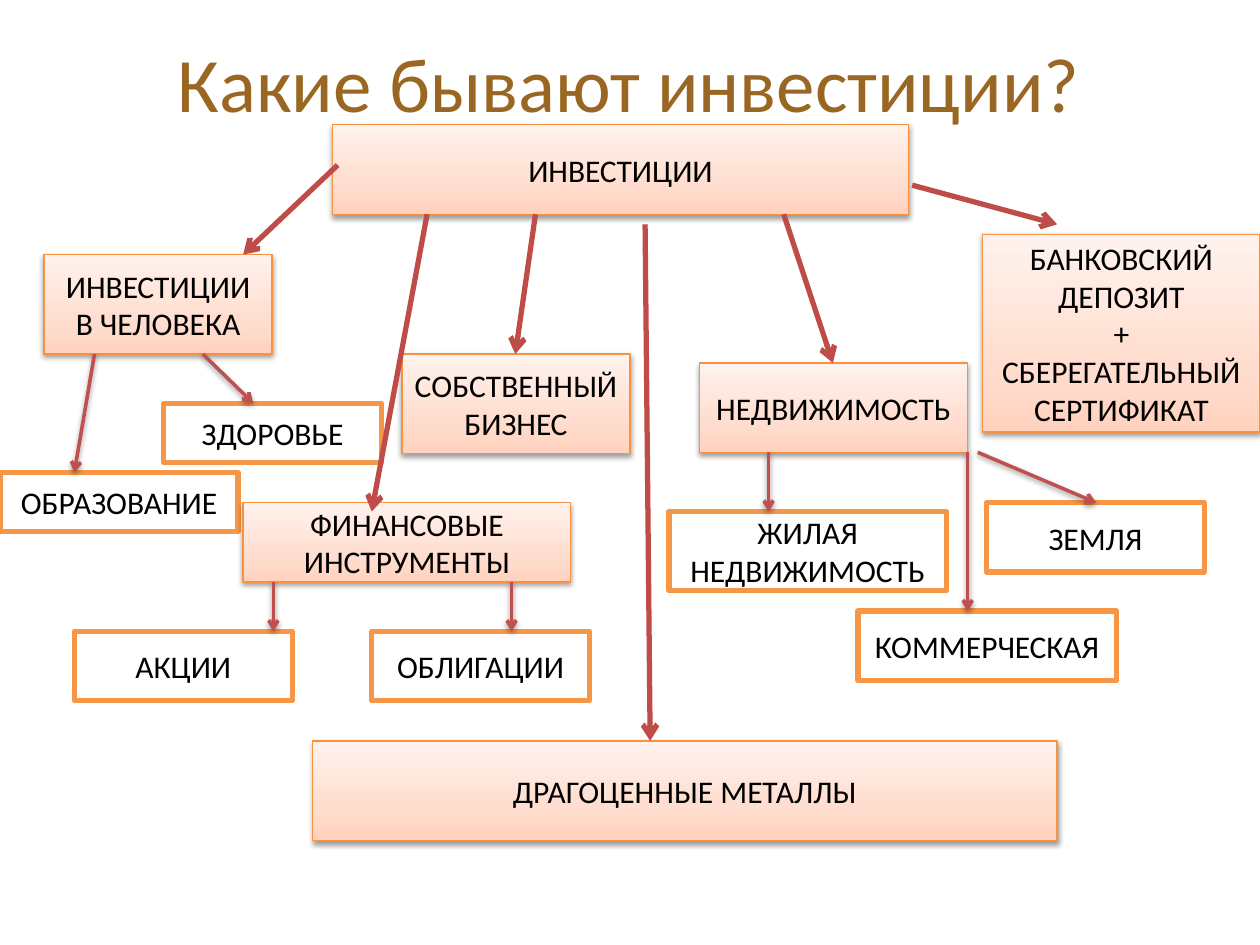
from copy import deepcopy

from lxml.etree import SubElement
from pptx import Presentation
from pptx.dml.color import RGBColor
from pptx.enum.shapes import MSO_CONNECTOR as CONN, MSO_SHAPE as SHAPE
from pptx.enum.text import MSO_ANCHOR as ANCHOR, PP_ALIGN as ALIGN
from pptx.oxml.ns import qn
from pptx.util import Inches, Pt

FONT = "Calibri"
GRADIENT = [(0, "FFD2BD"), (0.35, "FFDED0"), (1, "FFF2ED")]

BRANCHES = [
    ((0.35, 2.02, 1.81, 0.79), ["ИНВЕСТИЦИИ В ЧЕЛОВЕКА"], [
        ("ЗДОРОВЬЕ", (0.95, 1.18, 1.73, 0.47), 1.26, 1.66),
        ("ОБРАЗОВАНИЕ", (-0.35, 1.73, 1.89, 0.47), 0.4, 0.24),
    ]),
    ((1.93, 3.99, 2.6, 0.63), ["ФИНАНСОВЫЕ ИНСТРУМЕНТЫ"], [
        ("АКЦИИ", (-1.34, 1.02, 1.73, 0.55), 0.24, 0.24),
        ("ОБЛИГАЦИИ", (1.02, 1.02, 1.73, 0.55), 2.13, 2.13),
    ]),
    ((3.19, 2.81, 1.81, 0.79), ["СОБСТВЕННЫЙ БИЗНЕС"], []),
    ((5.55, 2.88, 2.13, 0.71), ["НЕДВИЖИМОСТЬ"], [
        ("ЖИЛАЯ НЕДВИЖИМОСТЬ", (-0.24, 1.18, 2.2, 0.63), 0.55, 0.55),
        ("КОММЕРЧЕСКАЯ", (1.26, 1.97, 2.05, 0.55), 2.13, 2.13),
        ("ЗЕМЛЯ", (2.28, 1.11, 1.73, 0.55), 2.21, 3.15),
    ]),
    ((7.8, 1.86, 2.2, 1.57),
     ["БАНКОВСКИЙ ДЕПОЗИТ", "+", "СБЕРЕГАТЕЛЬНЫЙ СЕРТИФИКАТ"], []),
    ((2.48, 5.88, 5.91, 0.79), ["ДРАГОЦЕННЫЕ МЕТАЛЛЫ"], []),
]

ROOT_ARROWS = [
    (0.04, 0.32, -0.71, 1.03),
    (1.61, 0.71, 1.45, 1.82),
    (0.75, 0.71, 0.31, 3.07),
    (3.58, 0.71, 3.97, 1.89),
    (4.6, 0.48, 5.75, 0.79),
    (2.48, 0.79, 2.52, 4.89),
]


def rgb(value):
    """Turn a hex string into a colour."""
    return RGBColor.from_string(value)


def write(tf, lines, size, color):
    """Fill a text frame with centred paragraphs."""
    tf.word_wrap = True
    tf.vertical_anchor = ANCHOR.MIDDLE
    for i, line in enumerate(lines):
        p = tf.add_paragraph() if i else tf.paragraphs[0]
        p.text = line
        p.alignment = ALIGN.CENTER
        p.font.size = Pt(size)
        p.font.name = FONT
        p.font.color.rgb = rgb(color)


def set_effects(sp, shadow):
    """Give a shape a soft shadow below it, or no effect at all."""
    effects = SubElement(sp._element.spPr, qn("a:effectLst"))
    if shadow:
        outer = SubElement(effects, qn("a:outerShdw"), blurRad="40000",
                           dist="20000", dir="5400000", rotWithShape="0")
        color = SubElement(outer, qn("a:srgbClr"), val="000000")
        SubElement(color, qn("a:alpha"), val="38000")


def draw_box(s, box, lines, line_color, line_width, shadow):
    """Add a captioned rectangle and return it."""
    sp = s.shapes.add_shape(SHAPE.RECTANGLE, *map(Inches, box))
    sp.line.color.rgb = rgb(line_color)
    sp.line.width = Pt(line_width)
    set_effects(sp, shadow)
    write(sp.text_frame, lines, 18, "000000")
    return sp


def draw_node(s, box, lines):
    """Add a gradient box for a main category."""
    sp = draw_box(s, box, lines, "F69240", 0.75, True)
    sp.fill.gradient()
    first = sp._element.spPr.find(".//" + qn("a:gs"))
    first.addnext(deepcopy(first))
    for stop, (position, color) in zip(sp.fill.gradient_stops, GRADIENT):
        stop.position = position
        stop.color.rgb = rgb(color)
    sp.fill.gradient_angle = 90


def draw_leaf(s, box, text):
    """Add a white outlined box for a subcategory."""
    sp = draw_box(s, box, [text], "F79646", 3, False)
    sp.fill.solid()
    sp.fill.fore_color.rgb = rgb("FFFFFF")


def draw_arrow(s, points, color, width, shadow):
    """Add a straight arrow from the first point to the second."""
    line = s.shapes.add_connector(CONN.STRAIGHT, *map(Inches, points))
    line.line.color.rgb = rgb(color)
    line.line.width = Pt(width)
    SubElement(line.line._get_or_add_ln(), qn("a:tailEnd"), type="arrow")
    set_effects(line, shadow)


def draw_title(s, box, text):
    """Add the slide heading."""
    tb = s.shapes.add_textbox(*map(Inches, box))
    write(tb.text_frame, [text], 44, "996721")


def draw_branch(s, box, lines, leaves):
    """Add a category with its subcategories placed relative to it."""
    x, y, _, h = box
    draw_node(s, box, lines)
    for text, (dx, dy, leaf_w, leaf_h), _, _ in leaves:
        draw_leaf(s, (x + dx, y + dy, leaf_w, leaf_h), text)
    for _, (_, dy, _, _), start, end in leaves:
        draw_arrow(s, (x + start, y + h, x + end, y + dy), "C0504D", 2, True)


def draw_root(s, box, text):
    """Add the top box and its arrows to the categories."""
    x, y = box[:2]
    draw_node(s, box, [text])
    for x1, y1, x2, y2 in ROOT_ARROWS:
        draw_arrow(s, (x + x1, y + y1, x + x2, y + y2), "BF4C48", 3, False)


def main():
    """Build the slide and save it."""
    prs = Presentation()
    prs.slide_width, prs.slide_height = Inches(10), Inches(7.5)
    s = prs.slides.add_slide(prs.slide_layouts[6])
    draw_title(s, (0.5, 0.3, 8.99, 0.69), "Какие бывают инвестиции?")
    for box, lines, leaves in BRANCHES:
        draw_branch(s, box, lines, leaves)
    draw_root(s, (2.64, 0.99, 4.57, 0.71), "ИНВЕСТИЦИИ")
    prs.save("out.pptx")


if __name__ == "__main__":
    main()
